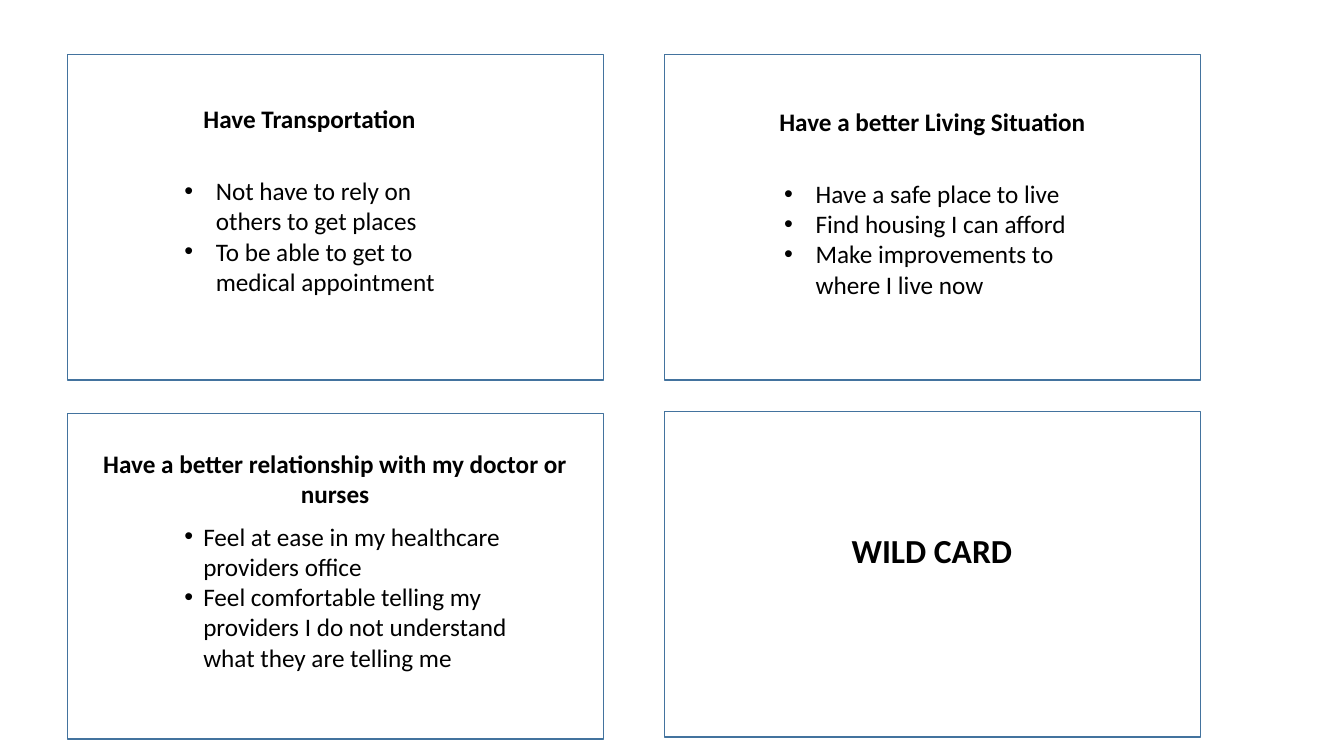
from pptx import Presentation
from pptx.dml.color import RGBColor
from pptx.enum.shapes import MSO_SHAPE as SHAPE
from pptx.enum.text import PP_ALIGN as ALIGN
from pptx.oxml.ns import qn
from pptx.util import Pt
from lxml.etree import SubElement

BORDER = RGBColor(0x43, 0x73, 0x9E)
BLACK = RGBColor(0, 0, 0)
FONT = "Calibri"

# Each card: corner, heading and bullet list; boxes are (left, top, width, height)
CARDS = [
    {"corner": (48.2, 38.9),
     "heading": ("Have Transportation", (138.2, 70.6, 167, 28.8), 18, ALIGN.LEFT),
     "bullets": ["Not have to rely on others to get places",
                 "To be able to get to medical appointment"],
     "list_box": (124.6, 121.7, 218.9, 94.3), "indent": 22.5},
    {"corner": (474.5, 38.9),
     "heading": ("Have a better Living Situation", (542.2, 72.7, 247.7, 28.8), 18, ALIGN.CENTER),
     "bullets": ["Have a safe place to live",
                 "Find housing I can afford",
                 "Make improvements to where I live now"],
     "list_box": (553, 123.8, 249.8, 94.3), "indent": 22.5},
    {"corner": (48.2, 295.2),
     "heading": ("Have a better relationship with my doctor or nurses",
                 (62.6, 316.8, 353.5, 51.1), 18, ALIGN.CENTER),
     "bullets": ["Feel at ease in my healthcare providers office",
                 "Feel comfortable telling my providers I do not understand "
                 "what they are telling me"],
     "list_box": (124.6, 368.6, 255.6, 116.6), "indent": 13.5},
    {"corner": (474.5, 293.8),
     "heading": ("WILD CARD", (601.2, 375.1, 130.3, 36), 24, ALIGN.LEFT),
     "bullets": []},
]
CARD_SIZE = (383, 232.6)


def add_text(slide, lines, box, size, bold=False, align=ALIGN.LEFT, wrap=True):
    tf = slide.shapes.add_textbox(*map(Pt, box)).text_frame
    tf.word_wrap = wrap
    tf.text = "\n".join(lines)
    for p in tf.paragraphs:
        p.alignment = align
        font = p.runs[0].font
        font.name, font.size, font.bold = FONT, Pt(size), bold
        font.color.rgb = BLACK
    return tf


def add_bullet(p, indent):
    pPr = p._p.get_or_add_pPr()
    pPr.set("marL", str(Pt(indent)))
    pPr.set("indent", str(-Pt(indent)))
    SubElement(pPr, qn("a:buFont")).set("typeface", "Arial")
    SubElement(pPr, qn("a:buChar")).set("char", "•")


def main():
    prs = Presentation()
    prs.slide_width, prs.slide_height = Pt(960), Pt(540)
    slide = prs.slides.add_slide(prs.slide_layouts[6])

    # Card frames
    for card in CARDS:
        sp = slide.shapes.add_shape(SHAPE.RECTANGLE, *map(Pt, card["corner"] + CARD_SIZE))
        sp.shadow.inherit = False
        sp.fill.background()
        sp.line.color.rgb = BORDER
        sp.line.width = Pt(1)

    # Headings and bullet lists
    for card in CARDS:
        text, box, size, align = card["heading"]
        add_text(slide, [text], box, size, True, align, wrap=bool(card["bullets"]))
        if card["bullets"]:
            tf = add_text(slide, card["bullets"], card["list_box"], 18)
            for p in tf.paragraphs:
                add_bullet(p, card["indent"])

    prs.save("out.pptx")


if __name__ == "__main__":
    main()
